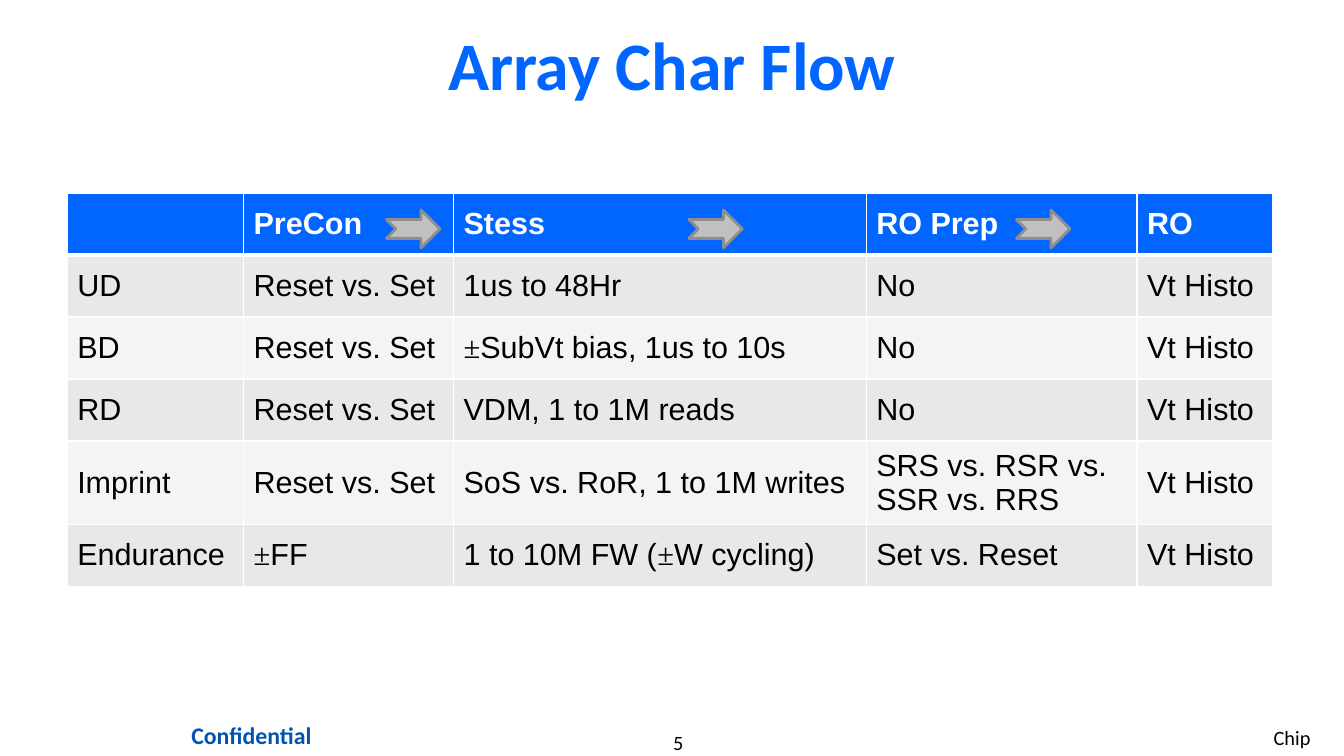
from itertools import groupby

from lxml.etree import SubElement
from pptx import Presentation
from pptx.dml.color import RGBColor
from pptx.enum.shapes import MSO_SHAPE
from pptx.enum.text import MSO_ANCHOR, PP_ALIGN
from pptx.oxml.ns import qn
from pptx.util import Emu, Pt

BLUE, NAVY, BLACK, WHITE = "0066FF", "0054B0", "000000", "FFFFFF"
BANDS = ["E8E8E8", "F4F4F4"]
SILVER, GREY = "C0C0C0", "8E8E8E"

COLUMN_WIDTHS = [168, 200, 393, 258, 129]
ROW_HEIGHT = 59
FLOW_ROWS = [
    ["", "PreCon", "Stess", "RO Prep", "RO"],
    ["UD", "Reset vs. Set", "1us to 48Hr", "No", "Vt Histo"],
    ["BD", "Reset vs. Set", "±SubVt bias, 1us to 10s", "No", "Vt Histo"],
    ["RD", "Reset vs. Set", "VDM, 1 to 1M reads", "No", "Vt Histo"],
    ["Imprint", "Reset vs. Set", "SoS vs. RoR, 1 to 1M writes",
     "SRS vs. RSR vs. SSR vs. RRS", "Vt Histo"],
    ["Endurance", "±FF", "1 to 10M FW (±W cycling)", "Set vs. Reset", "Vt Histo"],
]


def px(*lengths):
    return [Emu(length * 9525) for length in lengths]


def rgb(color):
    return RGBColor.from_string(color)


class SlideBuilder:
    def __init__(self, page):
        self.page = page

    def style(self, font, size, color, bold=False, name="Calibri"):
        font.name, font.size, font.bold = name, Pt(size), bold
        font.color.rgb = rgb(color)

    def title(self, text, left, top, width, height):
        box = self.page.shapes.title
        box.left, box.top, box.width, box.height = px(left, top, width, height)
        box.text_frame.text = text
        box.text_frame.vertical_anchor = MSO_ANCHOR.MIDDLE
        para = box.text_frame.paragraphs[0]
        para.alignment = PP_ALIGN.CENTER
        self.style(para.runs[0].font, 48.5, BLUE, True)

    def label(self, text, place, size, color, bold=False,
              align=PP_ALIGN.CENTER, insets=(0, 0)):
        frame = self.page.shapes.add_textbox(*px(*place)).text_frame
        frame.word_wrap = True
        frame.margin_left, frame.margin_top = px(*insets)
        frame.margin_right, frame.margin_bottom = px(*insets)
        frame.text = text
        para = frame.paragraphs[0]
        para.alignment = align
        self.style(para.runs[0].font, size, color, bold)

    def border(self, cell, side, points):
        line = SubElement(cell._tc.get_or_add_tcPr(), qn("a:" + side),
                          w=str(Pt(points)))
        fill = SubElement(line, qn("a:solidFill"))
        SubElement(fill, qn("a:srgbClr"), val=WHITE)

    def cell(self, cell, text, fill, color, header):
        for side in ["lnL", "lnR", "lnT", "lnB"]:
            self.border(cell, side, 3 if header and side == "lnB" else 1)
        cell.fill.solid()
        cell.fill.fore_color.rgb = rgb(fill)
        cell.vertical_anchor = MSO_ANCHOR.MIDDLE
        para = cell.text_frame.paragraphs[0]
        # The plus-minus sign has its own font
        for is_sign, letters in groupby(text, lambda letter: letter == "±"):
            span = para.add_run()
            span.text = "".join(letters)
            name = "Times New Roman" if is_sign else "Arial"
            self.style(span.font, 21.8, color, header, name)

    def table(self, rows, left, top, widths, row_height):
        place = px(left, top, sum(widths), row_height * len(rows))
        table = self.page.shapes.add_table(len(rows), len(widths), *place).table
        for column, width in zip(table.columns, px(*widths)):
            column.width = width
        for i, texts in enumerate(rows):
            header = i == 0
            fill = BLUE if header else BANDS[(i - 1) % 2]
            for j, text in enumerate(texts):
                self.cell(table.cell(i, j), text, fill,
                          WHITE if header else BLACK, header)

    def arrow(self, *place):
        arrow = self.page.shapes.add_shape(MSO_SHAPE.NOTCHED_RIGHT_ARROW, *px(*place))
        arrow.shadow.inherit = False
        arrow.fill.solid()
        arrow.fill.fore_color.rgb = rgb(SILVER)
        arrow.line.color.rgb = rgb(GREY)
        arrow.line.width = Pt(2)


def main():
    deck = Presentation()
    deck.slide_width, deck.slide_height = px(1280, 720)
    builder = SlideBuilder(deck.slides.add_slide(deck.slide_layouts[5]))

    # Footer
    builder.label("5", (534, 695, 224, 23), 14.5, BLACK)
    builder.label("Chip", (1203, 686, 67, 34), 14.5, BLACK,
                  align=PP_ALIGN.LEFT, insets=(10, 5))
    builder.label("Confidential", (149, 680, 181, 39), 17, NAVY, True,
                  insets=(12, 6))

    # Title and flow table
    builder.title("Array Char Flow", 96, 16, 1088, 88)
    builder.table(FLOW_ROWS, 64, 184, COLUMN_WIDTHS, ROW_HEIGHT)

    # Arrows between the header steps
    for left in [368, 656, 968]:
        builder.arrow(left, 200, 51, 36)

    deck.save("out.pptx")


if __name__ == "__main__":
    main()
